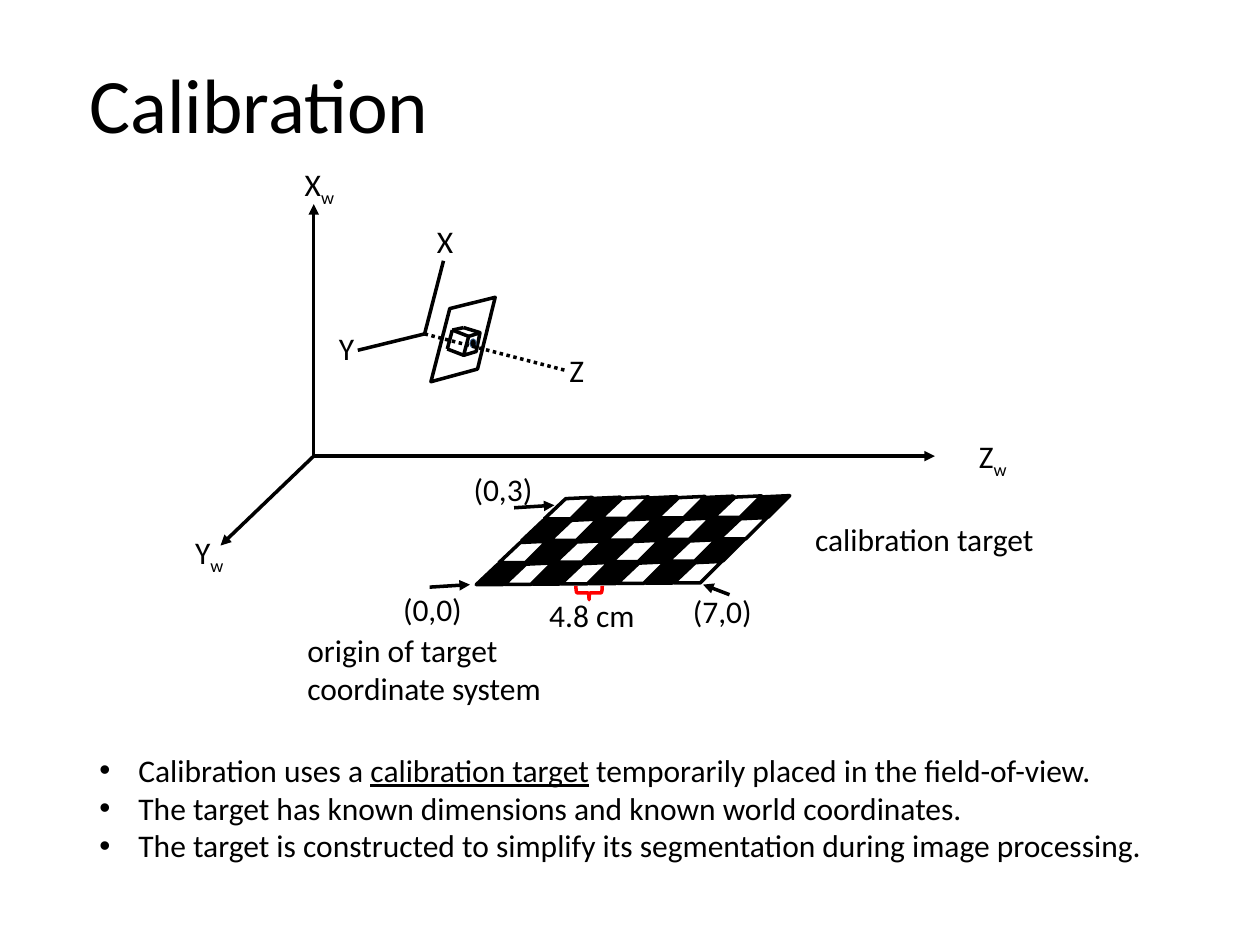
from itertools import pairwise, product

from lxml.etree import SubElement
from pptx import Presentation
from pptx.dml.color import RGBColor
from pptx.enum.dml import MSO_LINE
from pptx.enum.shapes import MSO_CONNECTOR, MSO_SHAPE
from pptx.enum.text import MSO_AUTO_SIZE, MSO_ANCHOR, PP_ALIGN
from pptx.oxml.ns import qn
from pptx.util import Inches, Pt

COLORS = {"ink": "000000", "paper": "FFFFFF", "brace": "FF0000", "dot_edge": "3A5F8C"}
FONT = "Calibri"
LABEL_HEIGHT = 0.4


def color(name):
    return RGBColor.from_string(COLORS[name])


def add_runs(paragraph, runs, size=18):
    for text, style in runs:
        run = paragraph.add_run()
        run.text = text
        run.font.name = FONT
        run.font.size = Pt(size)
        run.font.color.rgb = color("ink")
        if style == "underline":
            run.font.underline = True
        elif style == "subscript":
            run.font._element.set("baseline", "-25000")


def add_text(shapes, box, paragraphs, size=18, wrap=False):
    frame = shapes.add_textbox(*map(Inches, box)).text_frame
    frame.word_wrap = wrap
    frame.auto_size = MSO_AUTO_SIZE.SHAPE_TO_FIT_TEXT
    frame.vertical_anchor = MSO_ANCHOR.TOP
    for index, runs in enumerate(paragraphs):
        paragraph = frame.add_paragraph() if index else frame.paragraphs[0]
        paragraph.alignment = PP_ALIGN.LEFT
        add_runs(paragraph, runs, size)
    return frame


def add_label(shapes, left, top, width, text, subscript=None, height=LABEL_HEIGHT, wrap=False):
    runs = [(text, None)]
    if subscript:
        runs.append((subscript, "subscript"))
    add_text(shapes, (left, top, width, height), [runs], wrap=wrap)


def add_line(shapes, start, end, arrow=False, dotted=False):
    line = shapes.add_connector(MSO_CONNECTOR.STRAIGHT, *map(Inches, (*start, *end)))
    line.line.color.rgb = color("ink")
    line.line.width = Pt(2)
    if dotted:
        line.line.dash_style = MSO_LINE.ROUND_DOT
    properties = line._element.spPr
    if arrow:
        SubElement(properties.find(qn("a:ln")), qn("a:tailEnd"), type="triangle")
    SubElement(properties, qn("a:effectLst"))


def style_shape(shape, fill, line, width=2):
    shape.shadow.inherit = False
    if fill:
        shape.fill.solid()
        shape.fill.fore_color.rgb = color(fill)
    else:
        shape.fill.background()
    shape.line.color.rgb = color(line)
    shape.line.width = Pt(width)


def add_polygon(shapes, points, fill):
    corners = [(Inches(x), Inches(y)) for x, y in points]
    builder = shapes.build_freeform(*corners[0])
    builder.add_line_segments(corners[1:], close=True)
    style_shape(builder.convert_to_shape(), fill, "ink")


def add_world_axes(shapes, left, top):
    origin = (left + 1.04, top + 2.36)
    for dx, dy in [(0, -2), (-0.74, 0.71), (4.93, 0)]:
        add_line(shapes, origin, (origin[0] + dx, origin[1] + dy), arrow=True)
    for axis, dx, dy, width in [("X", 0.87, 0, 0.45), ("Y", 0, 2.92, 0.44), ("Z", 6.22, 2.16, 0.44)]:
        add_label(shapes, left + dx, top + dy, width, axis, "w")


def add_cube(shapes, left, top):
    cube = shapes.add_group_shape().shapes
    front = [(left + x, top + y) for x, y in [(0.26, 0.04), (0.23, 0.19), (0.13, 0.22), (0.17, 0.07)]]
    back = [(left + x, top + y) for x, y in [(0.13, 0), (0, 0.17), (0.04, 0.02)]]
    add_polygon(cube, front, "paper")
    top_right, bottom_left, top_left = back
    for start, end in pairwise([front[0], top_right, top_left, bottom_left, front[2]]):
        add_line(cube, start, end)
    add_line(cube, front[3], top_left)
    dot = cube.add_shape(MSO_SHAPE.OVAL, *map(Inches, (left + 0.18, top + 0.09, 0.05, 0.07)))
    style_shape(dot, "ink", "dot_edge", 0.5)


def add_camera(shapes, left, top):
    plane = [(1.34, 0.65), (1.2, 1.22), (0.83, 1.32), (0.98, 0.74)]
    add_polygon(shapes, [(left + x, top + y) for x, y in plane], "paper")
    add_cube(shapes, left + 0.96, top + 0.89)
    origin = (left + 0.78, top + 0.94)
    for dx, dy, dotted in [(1.12, 0.29, True), (-0.53, 0.13, False), (0.15, -0.58, False)]:
        add_line(shapes, origin, (origin[0] + dx, origin[1] + dy), dotted=dotted)
    for axis, dx, dy, width in [("X", 0.78, 0, 0.33), ("Y", 0, 0.85, 0.32), ("Z", 1.83, 1.03, 0.32)]:
        add_label(shapes, left + dx, top + dy, width, axis)


def add_checkerboard(shapes, left, bottom, rows=4, columns=8):
    board = shapes.add_group_shape().shapes
    cell = [(0, 0), (0.21, 0), (0.38, -0.17), (0.17, -0.16)]
    for row, column in product(reversed(range(rows)), range(columns)):
        x = left + 0.18 * row + 0.224 * column
        y = bottom - 0.174 * row - 0.002 * column
        fill = "paper" if (row + column) % 2 else "ink"
        add_polygon(board, [(x + dx, y + dy) for dx, dy in cell], fill)


def add_target(shapes, left, top):
    add_checkerboard(shapes, left + 1.44, top + 0.96)
    labels = [
        ("(0,0)", 0.76, 0.95, 0.72, LABEL_HEIGHT),
        ("(7,0)", 3.06, 0.97, 0.78, LABEL_HEIGHT),
        ("(0,3)", 1.32, 0, 0.71, LABEL_HEIGHT),
        ("4.8 cm", 1.92, 1, 0.93, LABEL_HEIGHT),
        ("calibration target", 4.03, 0.4, 2.09, LABEL_HEIGHT),
        ("origin of target coordinate system", 0, 1.28, 2.09, 0.71),
    ]
    for text, dx, dy, width, height in labels:
        add_label(shapes, left + dx, top + dy, width, text, height=height, wrap=True)
    pointers = [((1.07, 0.98), (1.39, 0.96)), ((3.45, 1.04), (3.24, 0.96)), ((1.74, 0.35), (2.06, 0.33))]
    for (x1, y1), (x2, y2) in pointers:
        add_line(shapes, (left + x1, top + y1), (left + x2, top + y2), arrow=True)
    brace = shapes.add_shape(MSO_SHAPE.RIGHT_BRACE, *map(Inches, (left + 2.28, top + 0.92, 0.11, 0.21)))
    brace.rotation = 90
    style_shape(brace, None, "brace")


def add_bullets(shapes, box):
    paragraphs = [
        [
            ("Calibration uses a ", None),
            ("calibration target", "underline"),
            (" temporarily placed in the field-of-view.", None),
        ],
        [("The target has known dimensions and known world coordinates.", None)],
        [("The target is constructed to simplify its segmentation during image processing.", None)],
    ]
    frame = add_text(shapes, box, paragraphs, wrap=True)
    for paragraph in frame.paragraphs:
        properties = paragraph._p.get_or_add_pPr()
        properties.set("marL", str(Inches(0.31)))
        properties.set("indent", str(-Inches(0.31)))
        SubElement(properties, qn("a:buFont"), typeface="Arial")
        SubElement(properties, qn("a:buChar"), char="•")


def main():
    presentation = Presentation()
    presentation.slide_width = Inches(10)
    presentation.slide_height = Inches(7.5)
    shapes = presentation.slides.add_slide(presentation.slide_layouts[6]).shapes
    add_text(shapes, (0.61, 0.4, 2.93, 0.84), [[("Calibration", None)]], size=44)
    add_world_axes(shapes, 1.45, 1.26)
    add_camera(shapes, 2.59, 1.71)
    add_target(shapes, 2.34, 3.68)
    add_bullets(shapes, (0.69, 5.91, 8.62, 1.01))
    presentation.save("out.pptx")


if __name__ == "__main__":
    main()
